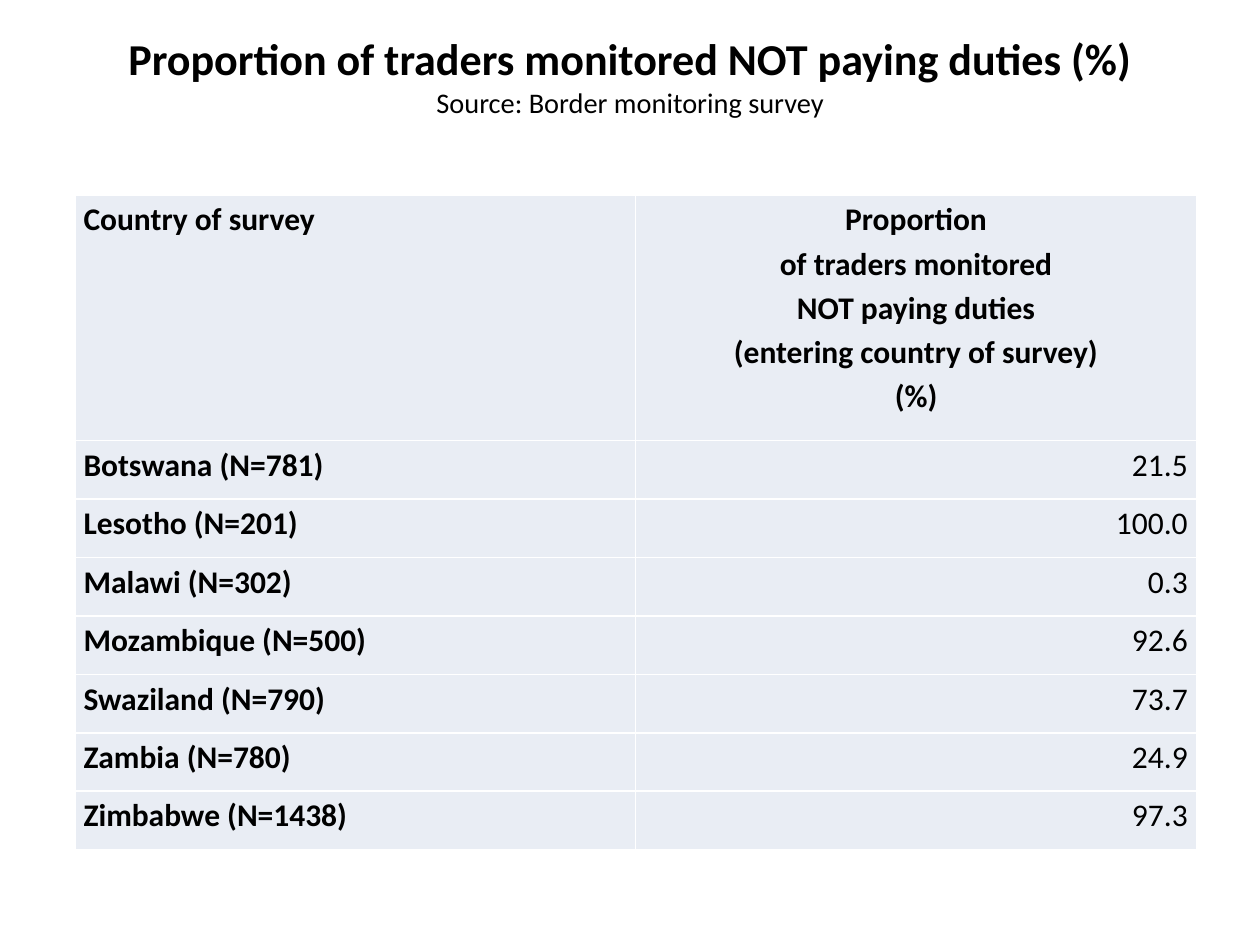
from lxml import etree
from pptx import Presentation
from pptx.dml.color import RGBColor
from pptx.enum.text import MSO_ANCHOR, PP_ALIGN
from pptx.oxml.ns import qn
from pptx.util import Pt

LEFT, CENTER, RIGHT = PP_ALIGN.LEFT, PP_ALIGN.CENTER, PP_ALIGN.RIGHT
MIDDLE, TOP = MSO_ANCHOR.MIDDLE, MSO_ANCHOR.TOP
TITLE_ONLY = 5

HEADINGS = [
    ["Country of survey"],
    ["Proportion", "of traders monitored", "NOT paying duties",
     "(entering country of survey)", "(%)"],
]
SURVEYS = [
    ("Botswana (N=781)", "21.5"),
    ("Lesotho (N=201)", "100.0"),
    ("Malawi (N=302)", "0.3"),
    ("Mozambique (N=500)", "92.6"),
    ("Swaziland (N=790)", "73.7"),
    ("Zambia (N=780)", "24.9"),
    ("Zimbabwe (N=1438)", "97.3"),
]


def add_run(paragraph, text, size, bold, color="000000"):
    run = paragraph.add_run()
    run.text = text
    run.font.name = "Calibri"
    run.font.size = Pt(size)
    run.font.bold = bold
    run.font.color.rgb = RGBColor.from_string(color)


def fill_cell(cell, lines, align, bold):
    """Write one paragraph per line and give the cell its fill and borders."""
    cell.margin_left = cell.margin_right = Pt(5)
    cell.margin_top = cell.margin_bottom = 0
    cell.vertical_anchor = TOP
    cell.fill.solid()
    cell.fill.fore_color.rgb = RGBColor.from_string("E9EDF4")
    for index, line in enumerate(lines):
        frame = cell.text_frame
        paragraph = frame.add_paragraph() if index else frame.paragraphs[0]
        paragraph.alignment = align
        paragraph.line_spacing = 1.15
        add_run(paragraph, line, 18, bold)
    properties = cell._tc.get_or_add_tcPr()
    for position, side in enumerate(("lnL", "lnR", "lnT", "lnB")):
        border = etree.Element(qn(f"a:{side}"), w=str(Pt(1)))
        border_fill = etree.SubElement(border, qn("a:solidFill"))
        etree.SubElement(border_fill, qn("a:srgbClr"), val="FFFFFF")
        properties.insert(position, border)


prs = Presentation()
prs.slide_width, prs.slide_height = Pt(720), Pt(540)
slide = prs.slides.add_slide(prs.slide_layouts[TITLE_ONLY])

title = slide.shapes.title
title.left, title.top, title.width, title.height = Pt(36), Pt(15), Pt(648), Pt(73.5)
title.text_frame.vertical_anchor = MIDDLE
title.text_frame.margin_bottom = Pt(21)
heading = title.text_frame.paragraphs[0]
heading.alignment = CENTER
add_run(heading, "Proportion of traders monitored NOT paying duties (%)", 25.2, True)
heading.add_line_break()
add_run(heading, "Source: Border monitoring survey", 16.2, False)

HEADER_HEIGHT, ROW_HEIGHT, COLUMN_WIDTH = 140.3, 33.4, 320.5
table = slide.shapes.add_table(
    len(SURVEYS) + 1, 2, Pt(42.75), Pt(111.5), Pt(2 * COLUMN_WIDTH),
    Pt(HEADER_HEIGHT + len(SURVEYS) * ROW_HEIGHT)).table
for column in table.columns:
    column.width = Pt(COLUMN_WIDTH)
for row in table.rows:
    row.height = Pt(ROW_HEIGHT)
table.rows[0].height = Pt(HEADER_HEIGHT)

for column, (lines, align) in enumerate(zip(HEADINGS, (LEFT, CENTER))):
    fill_cell(table.cell(0, column), lines, align, True)
for row, (country, proportion) in enumerate(SURVEYS, start=1):
    fill_cell(table.cell(row, 0), [country], LEFT, True)
    fill_cell(table.cell(row, 1), [proportion], RIGHT, False)

prs.save("out.pptx")
